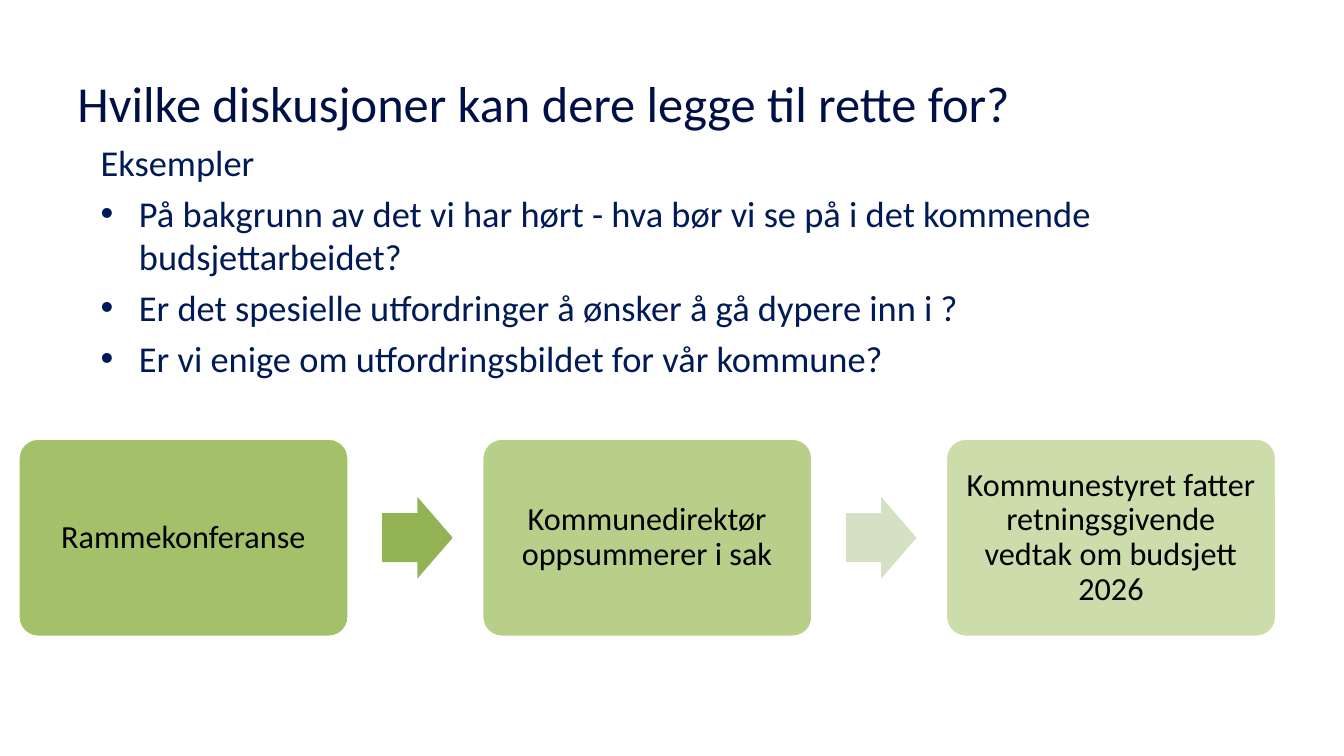
"""Build a slide with discussion questions and a three-step budget process."""
from lxml import etree
from pptx import Presentation
from pptx import util as u
from pptx.dml.color import RGBColor
from pptx.enum import shapes, text
from pptx.oxml.ns import qn

TITLE = "Hvilke diskusjoner kan dere legge til rette for?"
INTRO = "Eksempler"
QUESTIONS = [
    "På bakgrunn av det vi har hørt - hva bør vi se på i det kommende budsjettarbeidet?",
    "Er det spesielle utfordringer å ønsker å gå dypere inn i ?",
    "Er vi enige om utfordringsbildet for vår kommune?",
]
STEPS = [
    ("Rammekonferanse", 90),
    ("Kommunedirektør oppsummerer i sak", 70),
    ("Kommunestyret fatter retningsgivende vedtak om budsjett 2026", 50),
]
TITLE_NAVY = RGBColor(0x00, 0x10, 0x46)
BODY_NAVY = RGBColor(0x00, 0x1A, 0x58)
GREEN = RGBColor(0x9B, 0xBB, 0x59)
ARROW_COLORS = [RGBColor(0x94, 0xB3, 0x55), RGBColor(0xD5, 0xE1, 0xC4)]
BLACK = RGBColor(0, 0, 0)
WHITE = RGBColor(255, 255, 255)

FONT = "Calibri"
LEFT, TOP, STEP_PITCH = 0.18, 4.35, 4.6
BOX_W, BOX_H = 3.28, 1.97
ARROW_W, ARROW_H, ARROW_OFFSET = 0.7, 0.81, 3.61


def add_run(p, words, size, color):
    r = p.add_run()
    r.text = words
    r.font.name, r.font.size = FONT, u.Pt(size)
    r.font.color.rgb = color


def add_text_box(s, x, y, w, h, anchor):
    tf = s.shapes.add_textbox(*map(u.Inches, (x, y, w, h))).text_frame
    tf.word_wrap = True
    tf.vertical_anchor = anchor
    return tf


def add_bullet(p):
    pPr = p._p.get_or_add_pPr()
    pPr.set("marL", str(u.Inches(0.38)))
    pPr.set("indent", str(-u.Inches(0.38)))
    etree.SubElement(pPr, qn("a:buFont")).set("typeface", "Arial")
    etree.SubElement(pPr, qn("a:buChar")).set("char", "•")


def add_filled(s, kind, x, y, w, h, color, adjustments):
    sp = s.shapes.add_shape(kind, *map(u.Inches, (x, y, w, h)))
    for i, value in enumerate(adjustments):
        sp.adjustments[i] = value
    sp.shadow.inherit = False
    sp.fill.solid()
    sp.fill.fore_color.rgb = color
    sp.line.fill.background()
    return sp


def add_step(s, x, words, opacity):
    sp = add_filled(s, shapes.MSO_SHAPE.ROUNDED_RECTANGLE, x, TOP, BOX_W, BOX_H, GREEN, [0.1])
    color = sp._element.spPr.find(qn("a:solidFill")).find(qn("a:srgbClr"))
    etree.SubElement(color, qn("a:alpha")).set("val", str(opacity * 1000))
    sp.line.color.rgb = WHITE
    sp.line.width = u.Pt(2)
    tf = sp.text_frame
    tf.word_wrap = True
    tf.vertical_anchor = text.MSO_ANCHOR.MIDDLE
    tf.margin_left = tf.margin_right = tf.margin_top = tf.margin_bottom = u.Inches(0.1)
    p = tf.paragraphs[0]
    p.alignment = text.PP_ALIGN.CENTER
    p.line_spacing = 0.9
    add_run(p, words, 23, BLACK)


def main():
    prs = Presentation()
    prs.slide_width, prs.slide_height = u.Inches(13.33), u.Inches(7.5)
    s = prs.slides.add_slide(prs.slide_layouts[6])

    tf = add_text_box(s, 0.67, 0.4, 12, 1.24, text.MSO_ANCHOR.MIDDLE)
    add_run(tf.paragraphs[0], TITLE, 36, TITLE_NAVY)

    tf = add_text_box(s, 0.9, 1.34, 12, 4.83, text.MSO_ANCHOR.TOP)
    add_run(tf.paragraphs[0], INTRO, 26, BODY_NAVY)
    for question in QUESTIONS:
        p = tf.add_paragraph()
        p.space_before = u.Pt(5.2)
        add_bullet(p)
        add_run(p, question, 26, BODY_NAVY)

    for i, (words, opacity) in enumerate(STEPS):
        add_step(s, LEFT + i * STEP_PITCH, words, opacity)
    for i, color in enumerate(ARROW_COLORS):
        add_filled(s, shapes.MSO_SHAPE.RIGHT_ARROW, LEFT + ARROW_OFFSET + i * STEP_PITCH,
                   TOP + (BOX_H - ARROW_H) / 2, ARROW_W, ARROW_H, color, [0.6, 0.5])

    prs.save("out.pptx")


if __name__ == "__main__":
    main()
